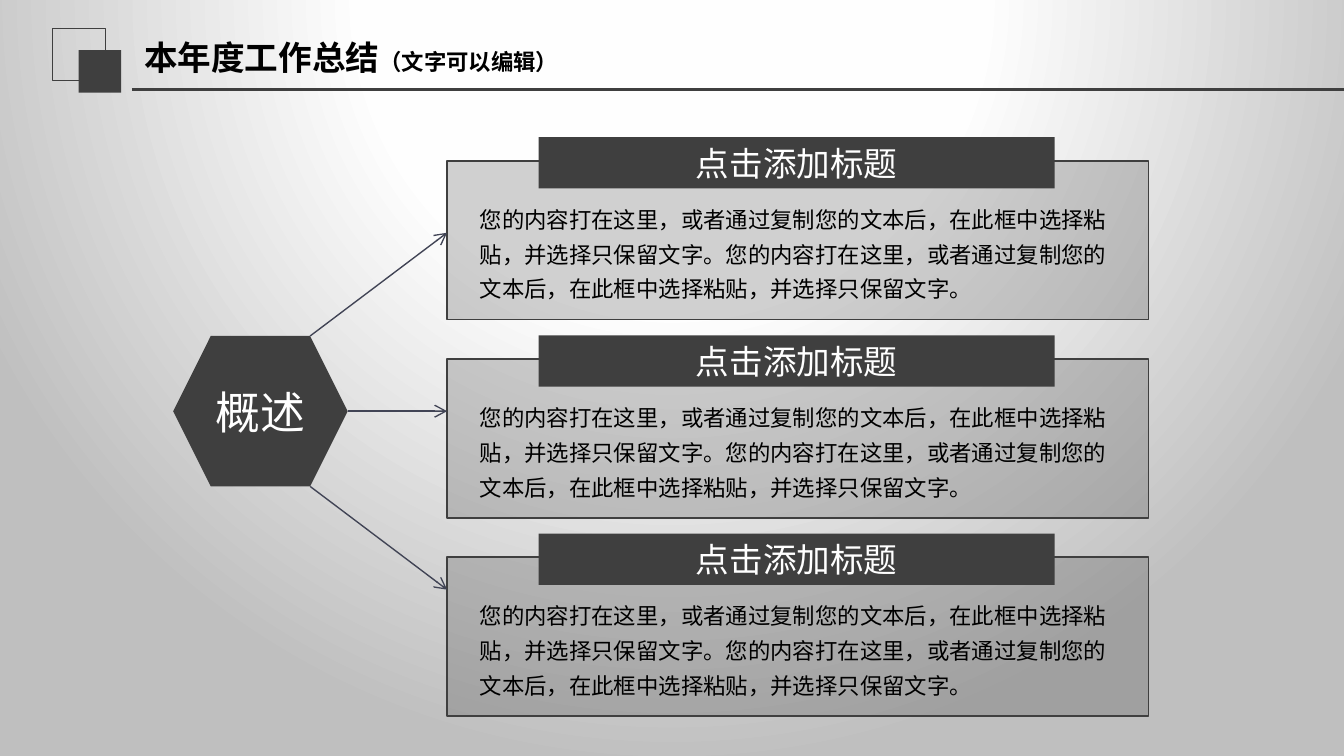
from lxml.etree import SubElement
from pptx import Presentation
from pptx.dml.color import RGBColor
from pptx.enum.shapes import MSO_CONNECTOR, MSO_SHAPE
from pptx.enum.text import MSO_ANCHOR, MSO_AUTO_SIZE, PP_ALIGN
from pptx.oxml import parse_xml
from pptx.oxml.ns import nsdecls, qn
from pptx.util import Pt

TITLE = [("本年度工作总结", 18), ("（文字可以编辑）", 12)]
HUB = "概述"
SENTENCE = "您的内容打在这里，或者通过复制您的文本后，在此框中选择粘贴，并选择只保留文字。"
CARDS = [("点击添加标题", SENTENCE * 2)] * 3

DARK = RGBColor(0x3F, 0x3F, 0x3F)
ARROW = RGBColor(0x41, 0x44, 0x55)
BLACK = RGBColor(0, 0, 0)
WHITE = RGBColor(0xFF, 0xFF, 0xFF)
BACKGROUND_STOPS = [(0, "FFFFFF"), (40, "FEFEFE"), (100, "BFBFBF")]
CJK_FONT = "Noto Sans CJK SC"

CARD_LEFT, CARD_TOP, CARD_WIDTH, CARD_HEIGHT = 239.5, 86.2, 375.8, 85
CARD_STEP = 106.2
BANNER_LEFT, BANNER_RISE, BANNER_WIDTH, BANNER_HEIGHT = 288.6, 12.7, 276.5, 27.4
BODY_LEFT, BODY_DROP, BODY_WIDTH, BODY_HEIGHT = 252, 17, 357, 62
HUB_LEFT, HUB_TOP, HUB_WIDTH, HUB_HEIGHT = 92.8, 180, 93.5, 80.6
ARROW_RISE = 55.3


def style(span, size, color, bold=None, name=CJK_FONT):
    span.font.size = Pt(size)
    span.font.bold = bold
    span.font.color.rgb = color
    span.font.name = name
    SubElement(span.font._element, qn("a:ea")).set("typeface", CJK_FONT)


def set_insets(frame):
    frame.margin_left = frame.margin_right = Pt(5)
    frame.margin_top = frame.margin_bottom = Pt(2.7)
    frame.word_wrap = True


def add_block(page, kind, bounds, fill=DARK, line=None, label="", size=18):
    block = page.shapes.add_shape(kind, *map(Pt, bounds))
    block.shadow.inherit = False
    if fill is None:
        block.fill.background()
    else:
        block.fill.solid()
        block.fill.fore_color.rgb = fill
    if line is None:
        block.line.fill.background()
    else:
        block.line.color.rgb = DARK
        block.line.width = Pt(line)
    if label:
        frame = block.text_frame
        set_insets(frame)
        frame.vertical_anchor = MSO_ANCHOR.MIDDLE
        frame.text = label
        frame.paragraphs[0].alignment = PP_ALIGN.CENTER
        style(frame.paragraphs[0].runs[0], size, WHITE)
    return block


def add_line(page, start, end, color, width, arrow=False):
    line = page.shapes.add_connector(MSO_CONNECTOR.STRAIGHT, *map(Pt, start + end))
    line.line.color.rgb = color
    line.line.width = Pt(width)
    if arrow:
        SubElement(line.line._get_or_add_ln(), qn("a:tailEnd")).set("type", "arrow")
    SubElement(line._element.spPr, qn("a:effectLst"))


def paint_background(page):
    page.background.fill.solid()
    stops = "".join(
        f'<a:gs pos="{position * 1000}"><a:srgbClr val="{color}"/></a:gs>'
        for position, color in BACKGROUND_STOPS
    )
    gradient = parse_xml(
        f'<a:gradFill {nsdecls("a")} rotWithShape="1"><a:gsLst>{stops}</a:gsLst>'
        '<a:path path="circle"><a:fillToRect l="50000" t="-80000" r="50000" b="180000"/>'
        "</a:path></a:gradFill>"
    )
    properties = page._element.find(".//" + qn("p:bgPr"))
    properties.replace(properties[0], gradient)


def add_header(page):
    add_block(page, MSO_SHAPE.RECTANGLE, (28.2, 15.1, 28.2, 28.2), None, 0.75)
    add_block(page, MSO_SHAPE.RECTANGLE, (42.2, 26.9, 22.8, 22.8))
    add_line(page, (70.7, 47.9), (720, 47.9), DARK, 1.25)
    title = page.shapes.title
    title.left, title.top, title.width, title.height = map(Pt, (70, 15.1, 256.3, 31))
    frame = title.text_frame
    frame.vertical_anchor = MSO_ANCHOR.MIDDLE
    paragraph = frame.paragraphs[0]
    paragraph.alignment = PP_ALIGN.LEFT
    for text, size in TITLE:
        span = paragraph.add_run()
        span.text = text
        style(span, size, BLACK, True, "Calibri")


def add_card(page, top, heading, body):
    card = add_block(page, MSO_SHAPE.RECTANGLE,
                     (CARD_LEFT, top, CARD_WIDTH, CARD_HEIGHT), line=1)
    color = card.fill._xPr.find(qn("a:solidFill"))[0]
    SubElement(color, qn("a:alpha")).set("val", "24000")
    add_block(page, MSO_SHAPE.RECTANGLE,
              (BANNER_LEFT, top - BANNER_RISE, BANNER_WIDTH, BANNER_HEIGHT), label=heading)
    box = page.shapes.add_textbox(
        *map(Pt, (BODY_LEFT, top + BODY_DROP, BODY_WIDTH, BODY_HEIGHT)))
    frame = box.text_frame
    set_insets(frame)
    frame.auto_size = MSO_AUTO_SIZE.SHAPE_TO_FIT_TEXT
    frame.text = body
    frame.paragraphs[0].line_spacing = 1.3
    style(frame.paragraphs[0].runs[0], 12, BLACK)


def add_hub(page):
    add_block(page, MSO_SHAPE.HEXAGON, (HUB_LEFT, HUB_TOP, HUB_WIDTH, HUB_HEIGHT),
              label=HUB, size=24)
    right = HUB_LEFT + HUB_WIDTH
    corner = right - HUB_HEIGHT / 4
    bottom = HUB_TOP + HUB_HEIGHT
    middle = HUB_TOP + HUB_HEIGHT / 2
    for start, end_top in [
        ((corner, HUB_TOP), HUB_TOP - ARROW_RISE),
        ((right, middle), middle),
        ((corner, bottom), bottom + ARROW_RISE),
    ]:
        add_line(page, start, (CARD_LEFT, end_top), ARROW, 0.75, arrow=True)


def main():
    deck = Presentation()
    deck.slide_width, deck.slide_height = Pt(720), Pt(405)
    page = deck.slides.add_slide(deck.slide_layouts[5])
    paint_background(page)
    add_header(page)
    for index, (heading, body) in enumerate(CARDS):
        add_card(page, CARD_TOP + index * CARD_STEP, heading, body)
    add_hub(page)
    deck.save("out.pptx")


if __name__ == "__main__":
    main()
